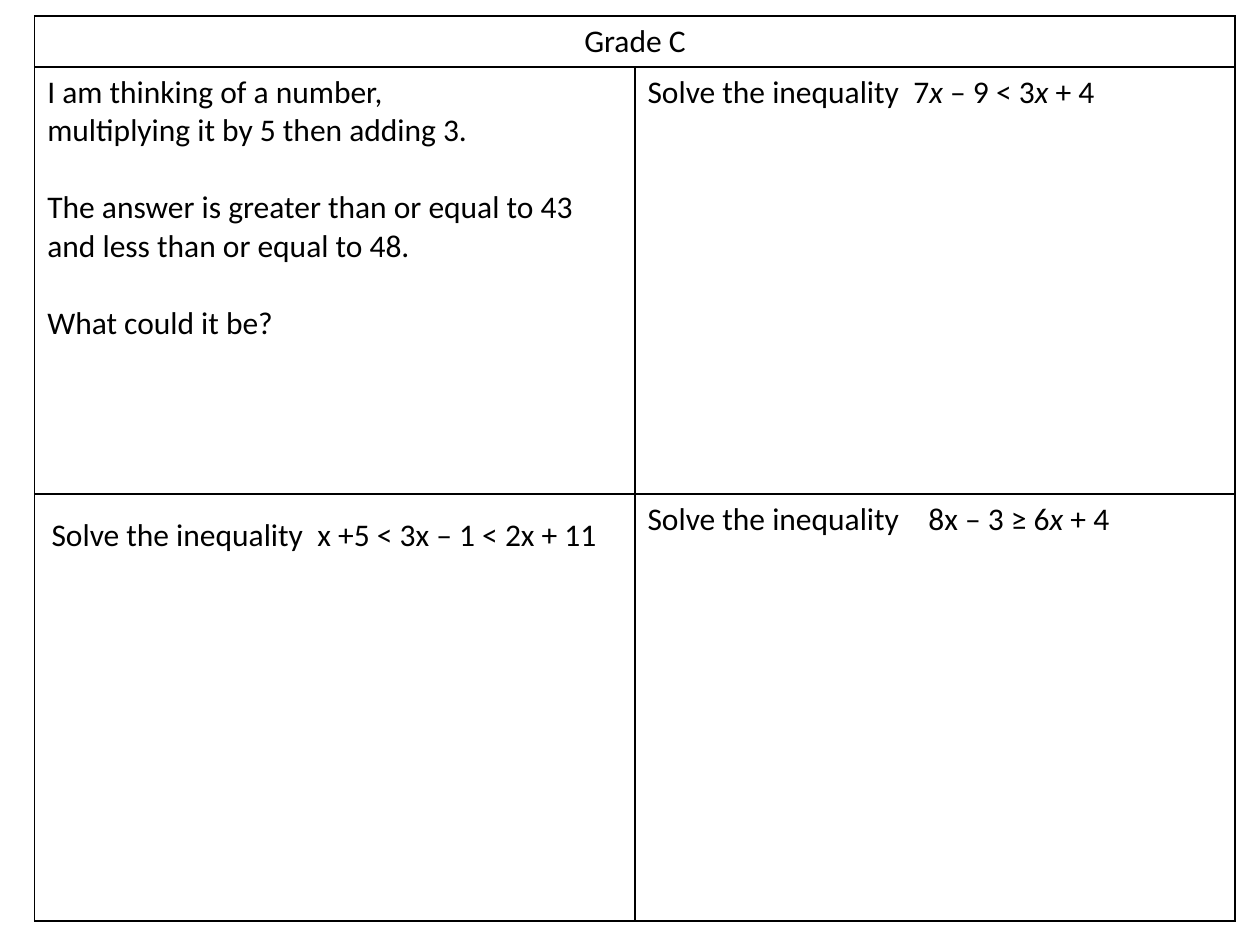
"""Builds a Grade C worksheet slide with four inequality questions."""
from lxml import etree
from pptx import Presentation
from pptx.dml.color import RGBColor
from pptx.enum import text
from pptx.oxml.ns import qn
from pptx.util import Cm, Pt

COLORS = {"ink": "000000"}
FONT, SIZE, GAP = "Calibri", 18, 22
LEFT, TOP, WIDTH = 0.7, 0.32, 12.1
HEIGHTS = [1.03, 8.61, 8.61]

TITLE = "Grade C"
PUZZLE = [
    ["I am thinking of a number,", "multiplying it by 5 then adding 3."],
    ["The answer is greater than or equal to 43", "and less than or equal to 48."],
    ["What could it be?"],
]
ASK = "Solve the inequality\t"
SOLVE = [
    (1, 5.36, [(ASK + "7", False), ("x ", True), ("– 9 < 3", False),
               ("x ", True), ("+ 4", False)]),
    (2, 5.66, [(ASK + "8x – 3 ≥ 6", False), ("x", True), (" + 4", False)]),
]
DOUBLE = [(ASK + "x +5 < 3x – 1 < 2x + 11", False)]


def style(para):
    para.font.name = FONT
    para.font.size = Pt(SIZE)
    para.font.color.rgb = RGBColor.from_string(COLORS["ink"])


def write(para, runs, stop):
    tabs = etree.SubElement(para._p.get_or_add_pPr(), qn("a:tabLst"))
    etree.SubElement(tabs, qn("a:tab"), pos=str(Cm(stop)), algn="l")
    for words, slant in runs:
        run = para.add_run()
        run.text = words
        if slant:
            run.font.italic = True
    style(para)


def border(cell):
    props = cell._tc.get_or_add_tcPr()
    for side in "LRTB":
        line = etree.SubElement(props, qn("a:ln" + side), w=str(Pt(1)))
        fill = etree.SubElement(line, qn("a:solidFill"))
        etree.SubElement(fill, qn("a:srgbClr"), val=COLORS["ink"])
    cell.fill.background()


def main():
    deck = Presentation()
    deck.slide_width, deck.slide_height = Cm(25.4), Cm(19.05)
    slide = deck.slides.add_slide(deck.slide_layouts[6])

    grid = slide.shapes.add_table(3, 2, Cm(LEFT), Cm(TOP), Cm(2 * WIDTH),
                                  Cm(sum(HEIGHTS))).table
    grid.first_row = grid.horz_banding = False
    for row, height in zip(grid.rows, HEIGHTS):
        row.height = Cm(height)
        for cell in row.cells:
            border(cell)

    head = grid.cell(0, 0)
    head.merge(grid.cell(0, 1))
    head.text = TITLE
    para = head.text_frame.paragraphs[0]
    para.alignment = text.PP_ALIGN.CENTER
    style(para)

    frame = grid.cell(1, 0).text_frame
    frame.text = "\n".join(line for block in PUZZLE for line in block)
    starts = [block[0] for block in PUZZLE[1:]]
    for para in frame.paragraphs:
        style(para)
        if para.text in starts:
            para.space_before = Pt(GAP)

    for row, stop, runs in SOLVE:
        write(grid.cell(row, 1).text_frame.paragraphs[0], runs, stop)

    box = slide.shapes.add_textbox(Cm(0.79), Cm(10.26), Cm(11.71), Cm(1.03))
    box.text_frame.word_wrap = True
    write(box.text_frame.paragraphs[0], DOUBLE, 5.36)

    deck.save("out.pptx")


if __name__ == "__main__":
    main()
